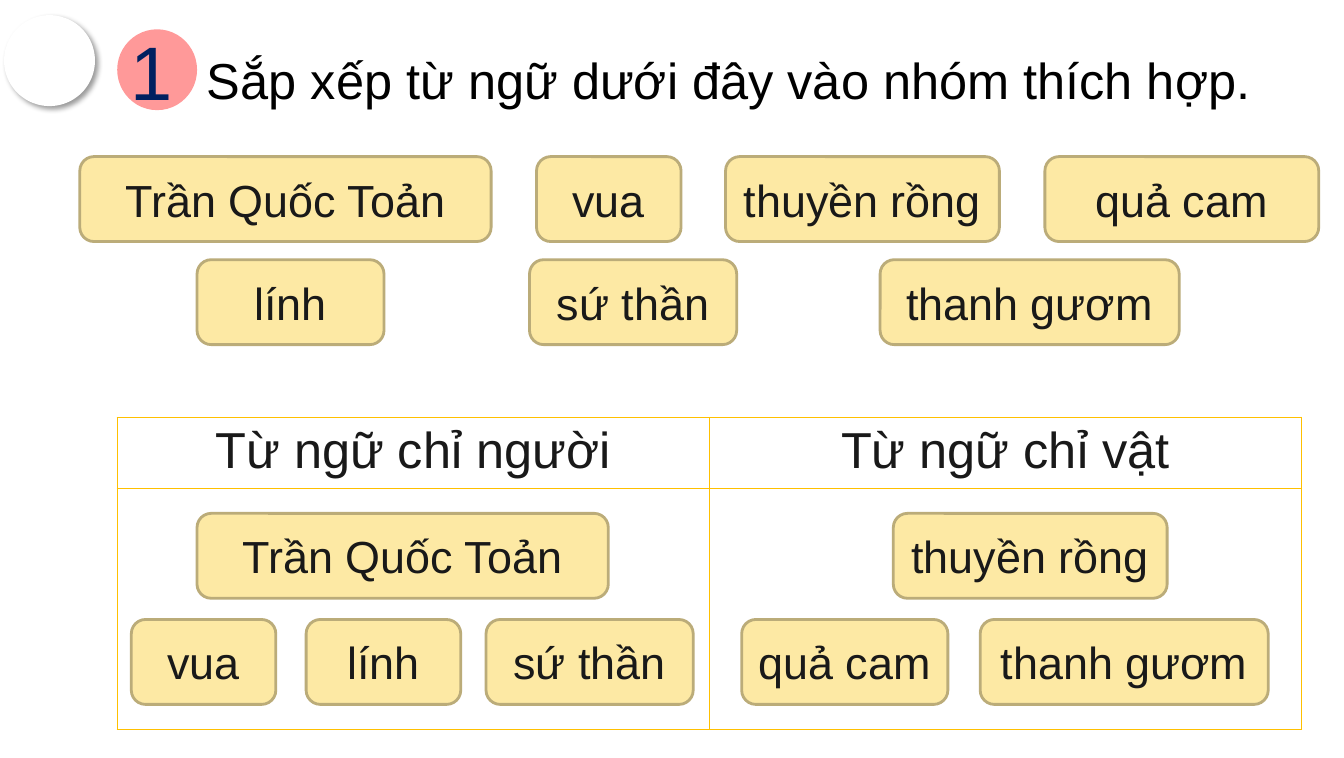
from lxml import etree
from pptx import Presentation
from pptx.dml.color import RGBColor
from pptx.enum.shapes import MSO_SHAPE as Shape
from pptx.enum.text import MSO_ANCHOR as Anchor, PP_ALIGN as Align
from pptx.oxml import parse_xml
from pptx.oxml.ns import nsdecls, qn
from pptx.util import Emu, Pt

# Content: lengths in px, 100 px to the inch
PX = 9144
FONT = "Arial"
INK, NAVY, BLACK, WHITE = "191919", "002060", "000000", "FFFFFF"
PINK, CARD_FILL, CARD_LINE, GOLD = "FF9999", "FDE9A4", "BBAC79", "FFC000"

NUMBER = "1"
TITLE = "Sắp xếp từ ngữ dưới đây vào nhóm thích hợp."
GROUPS = ["Từ ngữ chỉ người", "Từ ngữ chỉ vật"]
TABLE_LEFT, TABLE_TOP, COLUMN_WIDTH = 116, 413, 586
ROW_HEIGHTS = [70, 239]

CARD_HEIGHT = 84
CARD_ROWS = [  # top, then (word, left, width)
    (155, [("Trần Quốc Toản", 79, 407), ("vua", 531, 143),
           ("thuyền rồng", 718, 271), ("quả cam", 1034, 271)]),
    (257, [("lính", 195, 185), ("sứ thần", 524, 205), ("thanh gươm", 871, 296)]),
    (508, [("Trần Quốc Toản", 195, 407), ("thuyền rồng", 884, 271)]),
    (613, [("vua", 130, 143), ("lính", 303, 153), ("sứ thần", 481, 205),
           ("quả cam", 734, 204), ("thanh gươm", 970, 285)]),
]


def px(*lengths):
    return [Emu(length * PX) for length in lengths]


def color(value):
    return RGBColor.from_string(value)


def write(text_frame, text, size, ink, align):
    text_frame.text = text
    paragraph = text_frame.paragraphs[0]
    paragraph.alignment = align
    font = paragraph.runs[0].font
    font.name, font.size = FONT, Pt(size)
    font.color.rgb = color(ink)


def add_shape(kind, box, fill, line=None):
    shape = slide.shapes.add_shape(kind, *px(*box))
    shape.shadow.inherit = False
    shape.fill.solid()
    shape.fill.fore_color.rgb = color(fill)
    if line:
        shape.line.color.rgb = color(line)
        shape.line.width = Pt(2)
    else:
        shape.line.fill.background()
    return shape


def add_text(box, text, size, ink, inset=None):
    text_frame = slide.shapes.add_textbox(*px(*box)).text_frame
    text_frame.word_wrap = True
    text_frame.vertical_anchor = Anchor.MIDDLE
    if inset:
        text_frame.margin_left = text_frame.margin_right = Emu(inset * PX)
        text_frame.margin_top = text_frame.margin_bottom = Emu(inset * PX)
    write(text_frame, text, size, ink, Align.JUSTIFY)


def set_borders(cell, line_color, points):
    properties = cell._tc.get_or_add_tcPr()
    for index, side in enumerate(("lnL", "lnR", "lnT", "lnB")):
        properties.insert(index, parse_xml(
            f'<a:{side} {nsdecls("a")} w="{Pt(points)}" cap="flat" cmpd="sng">'
            f'<a:solidFill><a:srgbClr val="{line_color}"/></a:solidFill>'
            f'<a:prstDash val="solid"/></a:{side}>'))


presentation = Presentation()
presentation.slide_width, presentation.slide_height = px(1330, 750)
slide = presentation.slides.add_slide(presentation.slide_layouts[6])

# Heading
add_shape(Shape.OVAL, (116, 29, 79, 80), PINK)
add_text((116, 43, 80, 52), NUMBER, 54, NAVY, inset=13)
add_text((195, 43, 1059, 71), TITLE, 36, BLACK)

# White disc with a soft shadow
disc = add_shape(Shape.OVAL, (4, 15, 90, 90), WHITE)
effects = disc._element.spPr.find(qn("a:effectLst"))
shadow = etree.SubElement(effects, qn("a:outerShdw"), blurRad=str(Pt(4)),
                          dist=str(Pt(3)), dir=str(45 * 60000), algn="tl")
tint = etree.SubElement(shadow, qn("a:srgbClr"), val=BLACK)
etree.SubElement(tint, qn("a:alpha"), val="40000")

# Table of word groups
table = slide.shapes.add_table(
    len(ROW_HEIGHTS), len(GROUPS),
    *px(TABLE_LEFT, TABLE_TOP, COLUMN_WIDTH * len(GROUPS), sum(ROW_HEIGHTS))).table
for column in table.columns:
    column.width = Emu(COLUMN_WIDTH * PX)
for row, height in zip(table.rows, ROW_HEIGHTS):
    row.height = Emu(height * PX)
    for cell in row.cells:
        cell.fill.background()
        set_borders(cell, GOLD, 1)
for cell, group in zip(table.rows[0].cells, GROUPS):
    write(cell.text_frame, group, 36, INK, Align.CENTER)

# Word cards
for top, cards in CARD_ROWS:
    for word, left, width in cards:
        card = add_shape(Shape.ROUNDED_RECTANGLE, (left, top, width, CARD_HEIGHT),
                         CARD_FILL, CARD_LINE)
        card.text_frame.vertical_anchor = Anchor.MIDDLE
        write(card.text_frame, word, 32, INK, Align.CENTER)

presentation.save("out.pptx")
